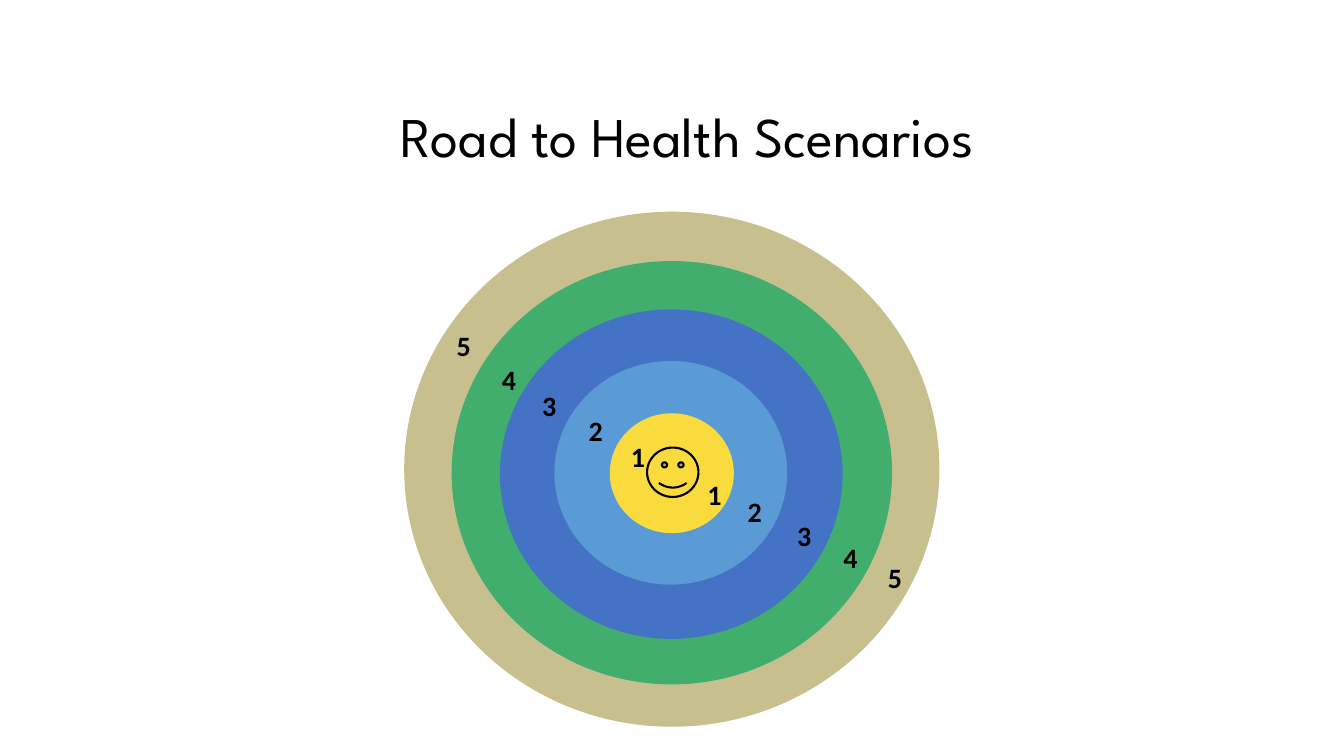
from pptx import Presentation
from pptx import util as u
from pptx.dml.color import RGBColor
from pptx.enum import shapes, text

INK = "000000"
GOLD = "F9DB3E"

# Rings from the outside in: left, top, width, height, fill
RINGS = [
    (288.7, 151.2, 382.3, 367.9, "C8BF8F"),
    (322.6, 186.5, 314.6, 302.4, "42AE6D"),
    (357.1, 221, 244.8, 235.4, "4472C4"),
    (396, 257.8, 166.3, 159.8, "5B9BD5"),
    (435.6, 295.2, 88.6, 85.7, GOLD),
]
# Number, then its place at lower right and at upper left
MARKS = [
    (5, (627.1, 393.1), (319, 227.5)),
    (4, (595.4, 378.7), (351.4, 252)),
    (3, (562.3, 362.9), (380.2, 270)),
    (2, (527, 346.3), (413.3, 288)),
    (1, (498.2, 334.1), (443.5, 306.7)),
]


def color(code):
    return RGBColor.from_string(code)


class Page:
    """Holds the slide, the group being filled and the shared style."""

    title_font = "League Spartan"
    mark_font = "Calibri"

    def __init__(self, deck):
        self.slide = deck.slides.add_slide(deck.slide_layouts[6])
        self.items = self.slide.shapes

    def group(self):
        self.items = self.slide.shapes.add_group_shape().shapes

    def shape(self, kind, box, fill, line=None):
        item = self.items.add_shape(kind, *map(u.Pt, box))
        item.shadow.inherit = False
        item.fill.solid()
        item.fill.fore_color.rgb = color(fill)
        if line:
            item.line.color.rgb = color(INK)
            item.line.width = u.Pt(line)
        else:
            item.line.fill.background()
        return item

    def label(self, words, box, font, size, inset, bold=False):
        frame = self.items.add_textbox(*map(u.Pt, box)).text_frame
        frame.word_wrap = True
        frame.margin_left = frame.margin_right = u.Pt(7.2)
        frame.margin_top = frame.margin_bottom = u.Pt(inset)
        par = frame.paragraphs[0]
        par.text = words
        par.font.name = font
        par.font.size = u.Pt(size)
        par.font.bold = bold
        par.font.color.rgb = color(INK)
        return frame

    def title(self, words, box):
        frame = self.label(words, box, self.title_font, 40, 3.6)
        frame.vertical_anchor = text.MSO_ANCHOR.MIDDLE
        frame.paragraphs[0].alignment = text.PP_ALIGN.CENTER
        frame.paragraphs[0].line_spacing = 0.9

    def mark(self, num, spot):
        self.label(str(num), (*spot, 18, 23.8), self.mark_font, 20, 7.2, True)


def main():
    deck = Presentation()
    deck.slide_width, deck.slide_height = u.Pt(960), u.Pt(540)
    page = Page(deck)

    # Heading
    page.title("Road to Health Scenarios", (193, 72, 595.4, 54.7))

    # Target with a smiling face at its centre
    page.group()
    for *box, fill in RINGS:
        page.shape(shapes.MSO_SHAPE.OVAL, box, fill)
    face = page.shape(shapes.MSO_SHAPE.SMILEY_FACE,
                      (462.2, 319.7, 36.7, 35.3), GOLD, 1.5)
    face.adjustments[0] = 0.047

    # Ring numbers on both sides
    for num, *spots in MARKS:
        for spot in spots:
            page.mark(num, spot)

    deck.save("out.pptx")


if __name__ == "__main__":
    main()
